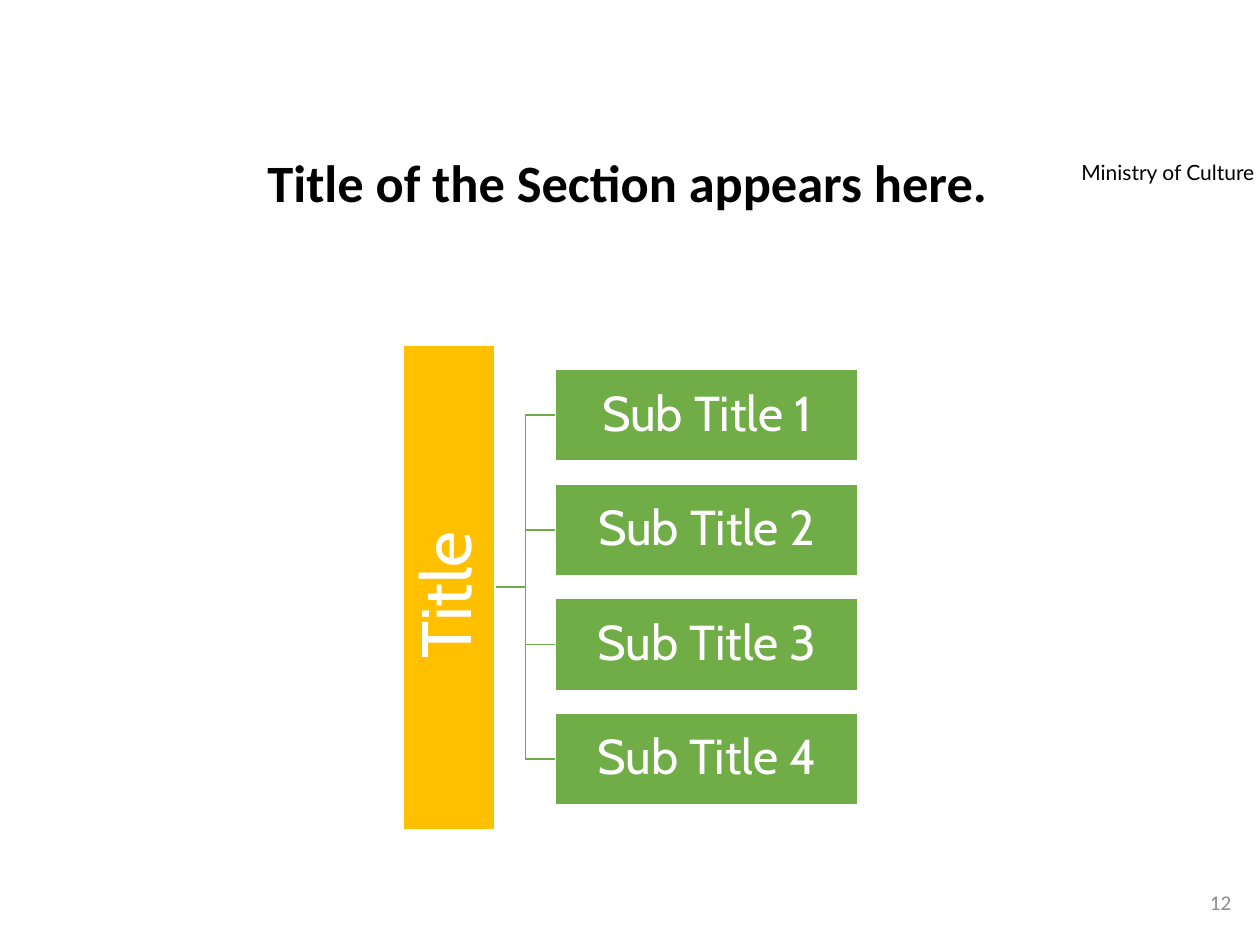
from pptx import Presentation
from pptx.dml.color import RGBColor
from pptx.enum.shapes import MSO_SHAPE
from pptx.enum.text import MSO_ANCHOR, PP_ALIGN
from pptx.util import Inches, Pt

BLACK = RGBColor(0x00, 0x00, 0x00)
WHITE = RGBColor(0xFF, 0xFF, 0xFF)
GRAY = RGBColor(0x8C, 0x8C, 0x8C)
GOLD = RGBColor(0xFF, 0xC0, 0x00)
GREEN = RGBColor(0x70, 0xAD, 0x47)


class SlideBuilder:
    def __init__(self, slide):
        self.slide = slide
        self.diagram_font = "Cabin"
        self.line_width = Pt(1)

    def set_text(self, tf, text, size, font, color, align=PP_ALIGN.CENTER,
                 bold=False, line_spacing=None):
        tf.word_wrap = True
        tf.text = text
        p = tf.paragraphs[0]
        p.alignment = align
        p.line_spacing = line_spacing
        r = p.runs[0]
        r.font.size = Pt(size)
        r.font.name = font
        r.font.bold = bold
        r.font.color.rgb = color

    def text(self, x, y, w, h, text, size, font, color,
             anchor=MSO_ANCHOR.TOP, **style):
        sp = self.slide.shapes.add_textbox(
            Inches(x), Inches(y), Inches(w), Inches(h))
        sp.text_frame.vertical_anchor = anchor
        self.set_text(sp.text_frame, text, size, font, color, **style)

    def box(self, x, y, w, h, text, size, fill, inset, rotation=0):
        sp = self.slide.shapes.add_shape(
            MSO_SHAPE.RECTANGLE, Inches(x), Inches(y), Inches(w), Inches(h))
        sp.shadow.inherit = False
        sp.rotation = rotation
        sp.fill.solid()
        sp.fill.fore_color.rgb = fill
        sp.line.color.rgb = WHITE
        sp.line.width = self.line_width
        tf = sp.text_frame
        tf.vertical_anchor = MSO_ANCHOR.MIDDLE
        tf.margin_left = tf.margin_right = Inches(inset)
        tf.margin_top = tf.margin_bottom = Inches(inset)
        self.set_text(tf, text, size, self.diagram_font, WHITE,
                      line_spacing=0.9)

    def branch(self, x1, y1, x2, y2):
        mid = (x1 + x2) / 2
        points = [(mid, y1), (mid, y2), (x2, y2)]
        fb = self.slide.shapes.build_freeform(Inches(x1), Inches(y1))
        fb.add_line_segments(
            [(Inches(x), Inches(y)) for x, y in points], close=False)
        sp = fb.convert_to_shape()
        sp.shadow.inherit = False
        sp.fill.background()
        sp.line.color.rgb = GREEN
        sp.line.width = self.line_width


def main():
    prs = Presentation()
    prs.slide_width = Inches(10)
    prs.slide_height = Inches(7.5)
    s = SlideBuilder(prs.slides.add_slide(prs.slide_layouts[6]))

    # Header label and page number
    s.text(8.18, 1.22, 2.18, 0.3, "Ministry of Culture", 12, "Lato", BLACK)
    s.text(7.62, 6.96, 2.25, 0.4, "12", 12, "Calibri", GRAY,
           anchor=MSO_ANCHOR.MIDDLE, align=PP_ALIGN.RIGHT)

    # Hierarchy: one upright title bar and four evenly spaced boxes
    center_y, bar_right, box_left = 4.66, 3.93, 4.41
    bar_length, box_width, box_height, pitch = 3.85, 2.4, 0.73, 0.91
    count = 4
    centers = [center_y + (i - (count - 1) / 2) * pitch for i in range(count)]

    for y in reversed(centers):
        s.branch(bar_right, center_y, box_left, y)

    bar_center = bar_right - box_height / 2
    s.box(bar_center - bar_length / 2, center_y - box_height / 2,
          bar_length, box_height, "Title ", 40, GOLD, 0.03, rotation=270)

    for i, y in enumerate(centers, 1):
        s.box(box_left, y - box_height / 2, box_width, box_height,
              f"Sub Title {i}", 28, GREEN, 0.02)

    # Section title
    s.text(1.22, 1.2, 7.43, 0.79, " Title of the Section appears here.", 30,
           "Calibri", BLACK, bold=True, line_spacing=0.9)

    prs.save("out.pptx")


if __name__ == "__main__":
    main()
